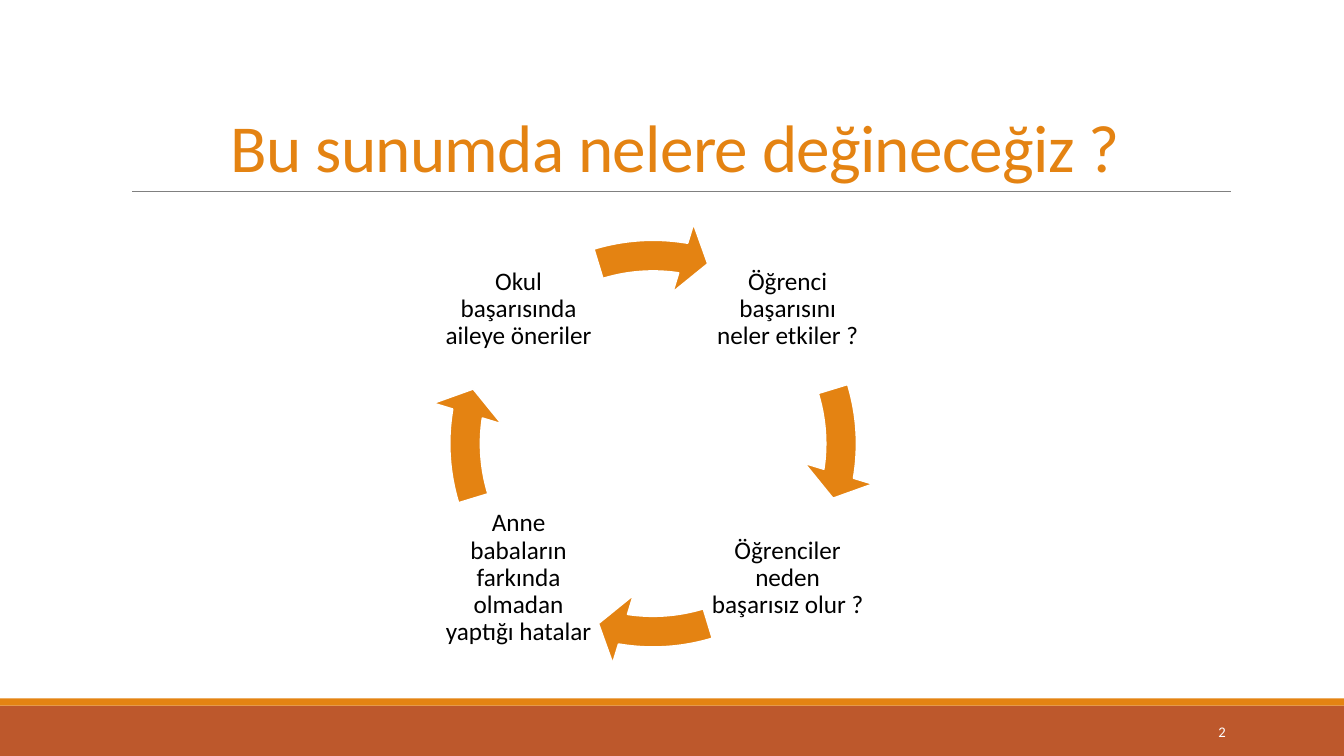
"""Build the agenda slide: a title above a cycle of four topics."""
import pptx
import pptx.util
import pptx.dml.color
import pptx.enum.shapes
import pptx.enum.text
import lxml.etree

Cm, Pt = pptx.util.Cm, pptx.util.Pt
RGB = pptx.dml.color.RGBColor
Kind = pptx.enum.shapes.MSO_SHAPE
Align = pptx.enum.text.PP_ALIGN
Anchor = pptx.enum.text.MSO_ANCHOR

TITLE = "Bu sunumda nelere değineceğiz ?"
NUMBER = "2"
TOPICS = [
    ("Öğrenci başarısını neler etkiler ?", 1, -1),
    ("Öğrenciler neden başarısız olur ?", 1, 1),
    ("Anne babaların farkında olmadan yaptığı hatalar", -1, 1),
    ("Okul başarısında aileye öneriler", -1, -1),
]
THEME = {
    "font": "Calibri",
    "orange": RGB.from_string("E48312"),
    "rust": RGB.from_string("BD582C"),
    "gray": RGB.from_string("808080"),
    "white": RGB.from_string("FFFFFF"),
    "black": RGB.from_string("000000"),
    "title": 48,
    "topic": 18,
    "number": 10.5,
}
WIDTH, HEIGHT = 33.87, 19.05
MID_X, MID_Y = 16.46, 11.18
RING, BOX, REACH = 11.28, 3.99, 3.39
FULL, TURN = 216, 54
HEAD, TAIL = 5.508, 205.841


def add_text(slide, text, area, size, color, align, anchor, inset=None, lead=1, track=None):
    box = slide.shapes.add_textbox(*map(Cm, area))
    frame = box.text_frame
    frame.word_wrap = True
    frame.vertical_anchor = anchor
    if inset is not None:
        frame.margin_left = frame.margin_right = Cm(inset)
        frame.margin_top = frame.margin_bottom = Cm(inset)
    para = frame.paragraphs[0]
    para.alignment = align
    para.line_spacing = lead
    run = para.add_run()
    run.text = text
    run.font.name = THEME["font"]
    run.font.size = Pt(THEME[size])
    run.font.color.rgb = THEME[color]
    if track is not None:
        run.font._element.set("spc", str(track))


def add_solid(slide, kind, area, color):
    shape = slide.shapes.add_shape(kind, *map(Cm, area))
    shape.shadow.inherit = False
    shape.fill.solid()
    shape.fill.fore_color.rgb = THEME[color]
    shape.line.fill.background()
    return shape


def add_rule(slide, left, right, top):
    rule = slide.shapes.add_connector(
        pptx.enum.shapes.MSO_CONNECTOR.STRAIGHT, Cm(left), Cm(top), Cm(right), Cm(top))
    rule.line.color.rgb = THEME["gray"]
    rule.line.width = Pt(0.5)
    lxml.etree.SubElement(rule._element.spPr, pptx.oxml.ns.qn("a:effectLst"))


def add_cycle(slide):
    ring = (MID_X - RING / 2, MID_Y - RING / 2, RING, RING)
    for step, (text, side, level) in enumerate(TOPICS):
        left = MID_X + side * REACH - BOX / 2
        top = MID_Y + level * REACH - BOX / 2
        add_text(slide, text, (left, top, BOX, BOX), "topic", "black",
                 Align.CENTER, Anchor.MIDDLE, inset=0.08, lead=0.9)
        arrow = add_solid(slide, Kind.CIRCULAR_ARROW, ring, "orange")
        arrow.line.color.rgb = THEME["white"]
        arrow.line.width = Pt(1.25)
        angles = [(end + step * TURN) % FULL for end in (HEAD, TAIL)]
        for index, value in enumerate([0.069, 4.65, *angles, 0.08]):
            arrow.adjustments[index] = value


def main():
    deck = pptx.Presentation()
    deck.slide_width, deck.slide_height = Cm(WIDTH), Cm(HEIGHT)
    slide = deck.slides.add_slide(deck.slide_layouts[6])
    add_solid(slide, Kind.RECTANGLE, (0, 17.78, WIDTH, 1.27), "rust")
    add_solid(slide, Kind.RECTANGLE, (0, 17.6, WIDTH, 0.18), "orange")
    add_rule(slide, 3.33, 31.01, 4.83)
    add_text(slide, TITLE, (3.05, 0.79, 27.94, 4.04), "title", "orange",
             Align.CENTER, Anchor.BOTTOM, lead=0.85, track=-50)
    add_text(slide, NUMBER, (27.51, 17.93, 3.63, 1.02), "number", "white",
             Align.RIGHT, Anchor.MIDDLE)
    add_cycle(slide)
    deck.save("out.pptx")


if __name__ == "__main__":
    main()
